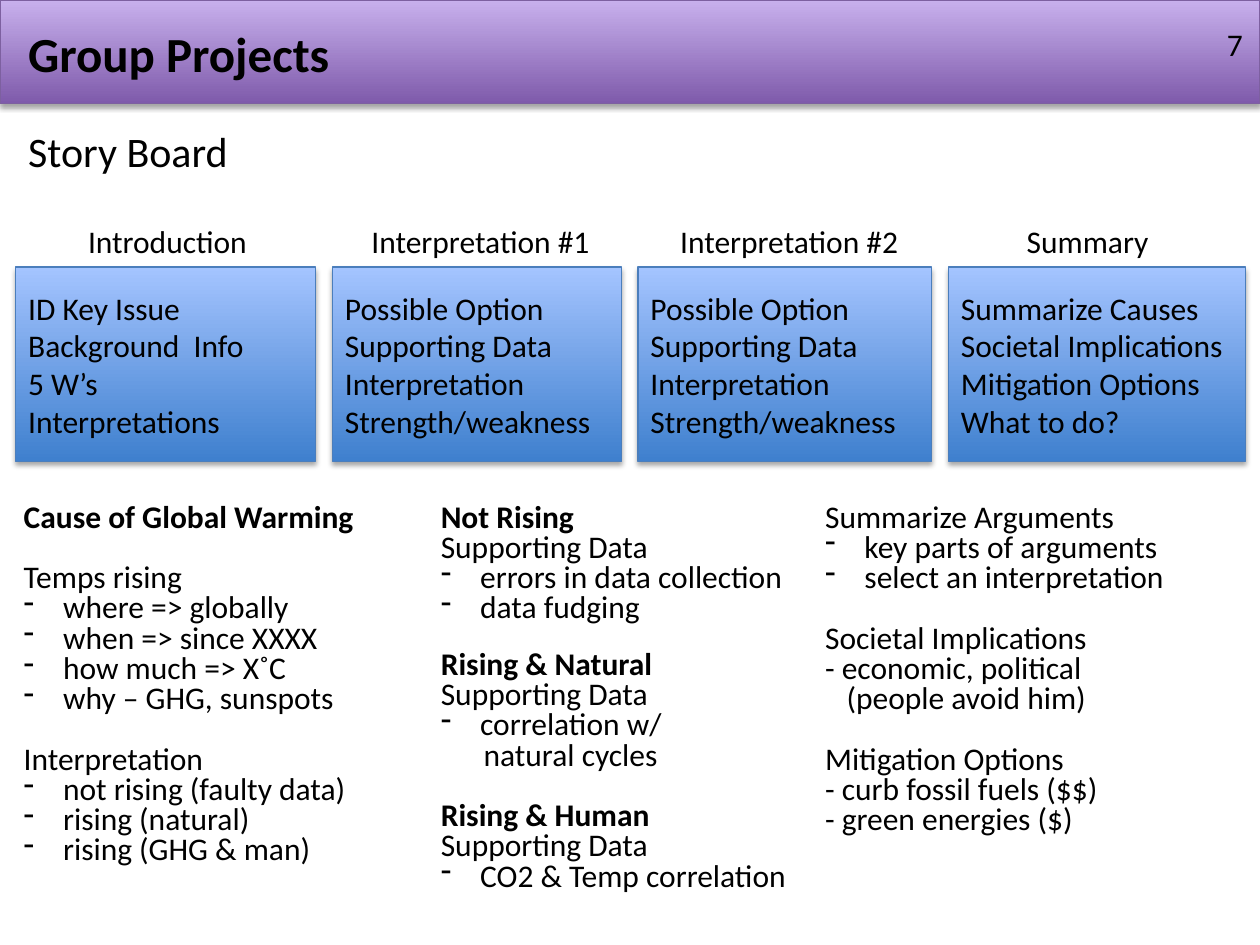
from lxml import etree
from pptx import Presentation
from pptx.dml.color import RGBColor
from pptx.enum import shapes, text
from pptx.oxml.ns import qn
from pptx.util import Pt

BLACK = RGBColor(0x00, 0x00, 0x00)
PURPLE_DARK = RGBColor(0x7F, 0x5B, 0xAB)
PURPLE_LIGHT = RGBColor(0xC8, 0xB0, 0xED)
PURPLE_EDGE = RGBColor(0x7D, 0x60, 0xA0)
BLUE_DARK = RGBColor(0x3F, 0x80, 0xCE)
BLUE_LIGHT = RGBColor(0xA4, 0xC4, 0xFF)
BLUE_EDGE = RGBColor(0x4B, 0x7E, 0xBC)

FONT = "Calibri"
BODY_SIZE = 18
BULLET_INDENT = 22.5
NOTE_LINE = 0.8
GROUP_GAP = 17.3

prs = Presentation()
prs.slide_width, prs.slide_height = Pt(720), Pt(540)
slide = prs.slides.add_slide(prs.slide_layouts[6])


def add_panel(left, top, width, height, dark, light, edge):
    """Add a rectangle shaded from dark at the foot to light at the top, with a soft shadow."""
    panel = slide.shapes.add_shape(shapes.MSO_SHAPE.RECTANGLE, Pt(left), Pt(top), Pt(width), Pt(height))
    panel.fill.gradient()
    panel.fill.gradient_angle = 90
    for stop, color in zip(panel.fill.gradient_stops, (dark, light)):
        stop.color.rgb = color
    panel.line.color.rgb = edge
    panel.line.width = Pt(0.75)
    panel.shadow.inherit = False
    effects = panel._element.spPr.find(qn("a:effectLst"))
    shadow = etree.SubElement(effects, qn("a:outerShdw"), blurRad=str(Pt(3.1)), dist=str(Pt(1.8)),
                              dir="5400000", rotWithShape="0")
    shade = etree.SubElement(shadow, qn("a:srgbClr"), val="000000")
    etree.SubElement(shade, qn("a:alpha"), val="35000")
    return panel


def write_lines(frame, lines, size=BODY_SIZE, bold=False, align=text.PP_ALIGN.LEFT):
    """Fill the frame with one paragraph a line and return the paragraphs."""
    for number, line in enumerate(lines):
        paragraph = frame.add_paragraph() if number else frame.paragraphs[0]
        paragraph.alignment = align
        run = paragraph.add_run()
        run.text = line
        run.font.name = FONT
        run.font.size = Pt(size)
        run.font.bold = bold
        run.font.color.rgb = BLACK
    return frame.paragraphs


# Title band, page number and subtitle
add_panel(0, 0, 720, 59, PURPLE_DARK, PURPLE_LIGHT, PURPLE_EDGE)

title = slide.shapes.add_textbox(Pt(9), Pt(10), Pt(700), Pt(41)).text_frame
title.word_wrap = True
write_lines(title, ["Group Projects"], size=28, bold=True)

page_number = slide.shapes.add_textbox(Pt(549.4), Pt(10.5), Pt(167.8), Pt(29)).text_frame
page_number.word_wrap = True
page_number.vertical_anchor = text.MSO_ANCHOR.MIDDLE
write_lines(page_number, ["7"], align=text.PP_ALIGN.RIGHT)

subtitle = slide.shapes.add_textbox(Pt(9), Pt(68), Pt(130), Pt(36)).text_frame
subtitle.word_wrap = False
write_lines(subtitle, ["Story Board"], size=24)

# Story board: heading, heading left, heading width, card width, card lines
argument = ["Possible Option", "Supporting Data", "Interpretation", "Strength/weakness"]
stages = [
    ("Introduction", 43.2, 106.6, 171.4,
     ["ID Key Issue", "Background  Info", "5 W’s", "Interpretations"]),
    ("Interpretation #1", 205.2, 141.8, 165, argument),
    ("Interpretation #2", 381.6, 141.8, 167.8, argument),
    ("Summary", 579.6, 85, 169.6,
     ["Summarize Causes", "Societal Implications", "Mitigation Options", "What to do?"]),
]
CARD_GAP = 9.6
card_left = 9
for heading, heading_left, heading_width, card_width, card_lines in stages:
    heading_frame = slide.shapes.add_textbox(Pt(heading_left), Pt(123.2), Pt(heading_width), Pt(29)).text_frame
    heading_frame.word_wrap = False
    write_lines(heading_frame, [heading])

    card = add_panel(card_left, 152.6, card_width, 111, BLUE_DARK, BLUE_LIGHT, BLUE_EDGE).text_frame
    card.word_wrap = True
    card.vertical_anchor = text.MSO_ANCHOR.MIDDLE
    write_lines(card, card_lines)
    card_left += card_width + CARD_GAP

# Notes: left, top, width, height, groups of (line, style); a number is a plain left indent
notes = [
    (6.5, 284.4, 206.6, 217.4, [
        [("Cause of Global Warming", "bold")],
        [("Temps rising", "plain"), ("where => globally", "bullet"), ("when => since XXXX", "bullet"),
         ("how much => X˚C", "bullet"), ("why – GHG, sunspots", "bullet")],
        [("Interpretation", "plain"), ("not rising (faulty data)", "bullet"),
         ("rising (natural)", "bullet"), ("rising (GHG & man)", "bullet")],
    ]),
    (244.8, 284.4, 211.7, 77.8, [
        [("Not Rising", "bold"), ("Supporting Data", "plain"),
         ("errors in data collection", "bullet"), ("data fudging", "bullet")],
    ]),
    (244.8, 368.6, 142.6, 77.8, [
        [("Rising & Natural", "bold"), ("Supporting Data", "plain"),
         ("correlation w/", "bullet"), ("natural cycles", 24.5)],
    ]),
    (244.8, 455, 214.6, 60.5, [
        [("Rising & Human", "bold"), ("Supporting Data", "plain"), ("CO2 & Temp correlation", "bullet")],
    ]),
    (464.4, 284.4, 209.5, 200.2, [
        [("Summarize Arguments", "plain"), ("key parts of arguments", "bullet"),
         ("select an interpretation", "bullet")],
        [("Societal Implications", "plain"), ("- economic, political", "plain"),
         ("(people avoid him)", 12.3)],
        [("Mitigation Options", "plain"), ("- curb fossil fuels ($$)", "plain"),
         ("- green energies ($)", "plain")],
    ]),
]
for left, top, width, height, groups in notes:
    note = slide.shapes.add_textbox(Pt(left), Pt(top), Pt(width), Pt(height)).text_frame
    note.word_wrap = False
    entries = [(line, style, group_number > 0 and position == 0)
               for group_number, group in enumerate(groups)
               for position, (line, style) in enumerate(group)]
    paragraphs = write_lines(note, [line for line, _, _ in entries])
    for paragraph, (_, style, opens_group) in zip(paragraphs, entries):
        paragraph.line_spacing = NOTE_LINE
        if opens_group:
            paragraph.space_before = Pt(GROUP_GAP)
        paragraph.runs[0].font.bold = style == "bold"
        properties = paragraph._p.get_or_add_pPr()
        if style == "bullet":
            properties.set("marL", str(Pt(BULLET_INDENT)))
            properties.set("indent", str(-Pt(BULLET_INDENT)))
            etree.SubElement(properties, qn("a:buFontTx"))
            etree.SubElement(properties, qn("a:buChar"), char="-")
        elif style not in ("bold", "plain"):
            properties.set("marL", str(Pt(style)))

prs.save("out.pptx")
